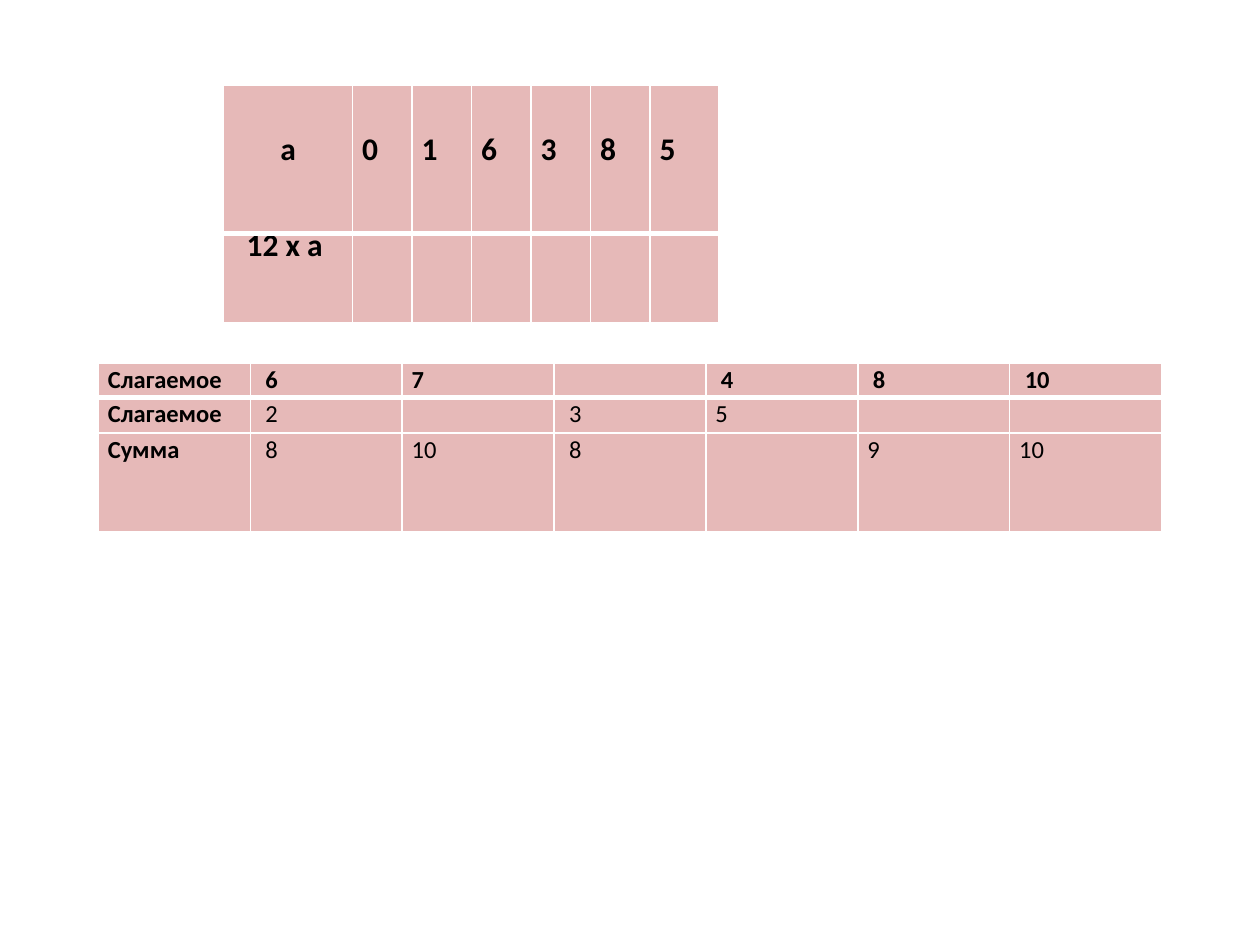
from lxml.etree import SubElement
from pptx import Presentation
from pptx.dml.color import RGBColor
from pptx.enum.text import PP_ALIGN as Align
from pptx.oxml.ns import qn
from pptx.util import Pt

PINK, WHITE, BLACK = "E6B9B8", "FFFFFF", "000000"
SIDE_MARGIN = 5.4


def color(value):
    return RGBColor.from_string(value)


def apply_format(target, values):
    for name, value in values.items():
        setattr(target, name, value)


def add_borders(cell, widths):
    """Draw white cell edges; widths maps L, R, T and B to points."""
    properties = cell._tc.get_or_add_tcPr()
    for side, width in widths.items():
        line = SubElement(properties, qn(f"a:ln{side}"), w=str(Pt(width)))
        fill = SubElement(line, qn("a:solidFill"))
        SubElement(fill, qn("a:srgbClr"), val=WHITE)


def fill_cell(cell, text, size, bold, indent=0, top=0, align=Align.JUSTIFY):
    apply_format(cell, {
        "margin_left": Pt(SIDE_MARGIN + indent), "margin_right": Pt(SIDE_MARGIN),
        "margin_top": Pt(top), "margin_bottom": 0,
    })
    cell.fill.solid()
    cell.fill.fore_color.rgb = color(PINK)
    para = cell.text_frame.paragraphs[0]
    apply_format(para, {"alignment": align, "line_spacing": Pt(18)})
    para.font.size = Pt(size)
    if text:
        span = para.add_run()
        span.text = text
        apply_format(span.font, {"name": "Calibri", "size": Pt(size), "bold": bold})
        span.font.color.rgb = color(BLACK)


def add_grid(page, left, top, widths, heights, rows, style):
    """Add a table; style(row, column) gives the text format of a cell."""
    frame = page.shapes.add_table(len(heights), len(widths), Pt(left), Pt(top),
                                  Pt(sum(widths)), Pt(sum(heights)))
    table = frame.table
    for column, width in zip(table.columns, widths):
        column.width = Pt(width)
    for r, (texts, height) in enumerate(zip(rows, heights)):
        table.rows[r].height = Pt(height)
        for c, text in enumerate(texts):
            cell = table.cell(r, c)
            add_borders(cell, {"L": 1, "R": 1, "T": 3 if r == 1 else 1,
                               "B": 3 if r == 0 else 1})
            fill_cell(cell, text, **style(r, c))


def product_style(row, column):
    values = {"size": 18, "bold": True}
    if row == 0:
        values["top"] = 30
        if column == 0:
            values["align"] = Align.CENTER
    elif column == 0:
        values["indent"] = 8
    return values


def sum_style(row, column):
    indented = {0: (1, 4, 5, 6), 1: (1, 3), 2: (1, 3)}
    return {"size": 14, "bold": row == 0 or column == 0,
            "indent": 3.2 if column in indented[row] else 0}


def main():
    deck = Presentation()
    apply_format(deck, {"slide_width": Pt(720), "slide_height": Pt(540)})
    page = deck.slides.add_slide(deck.slide_layouts[6])

    sums = [
        ["Слагаемое", "6", "7", "", "4", "8", "10"],
        ["Слагаемое", "2", "", "3", "5", "", ""],
        ["Сумма", "8", "10", "8", "", "9", "10"],
    ]
    add_grid(page, 56.2, 207.6, [86.8] * 7, [19.5, 20.4, 56.4], sums, sum_style)

    products = [["а", "0", "1", "6", "3", "8", "5"], ["12 х а"] + [""] * 6]
    add_grid(page, 127.6, 48.8, [74] + [34] * 5 + [39.4], [84.8, 51], products,
             product_style)
    deck.save("out.pptx")


if __name__ == "__main__":
    main()
